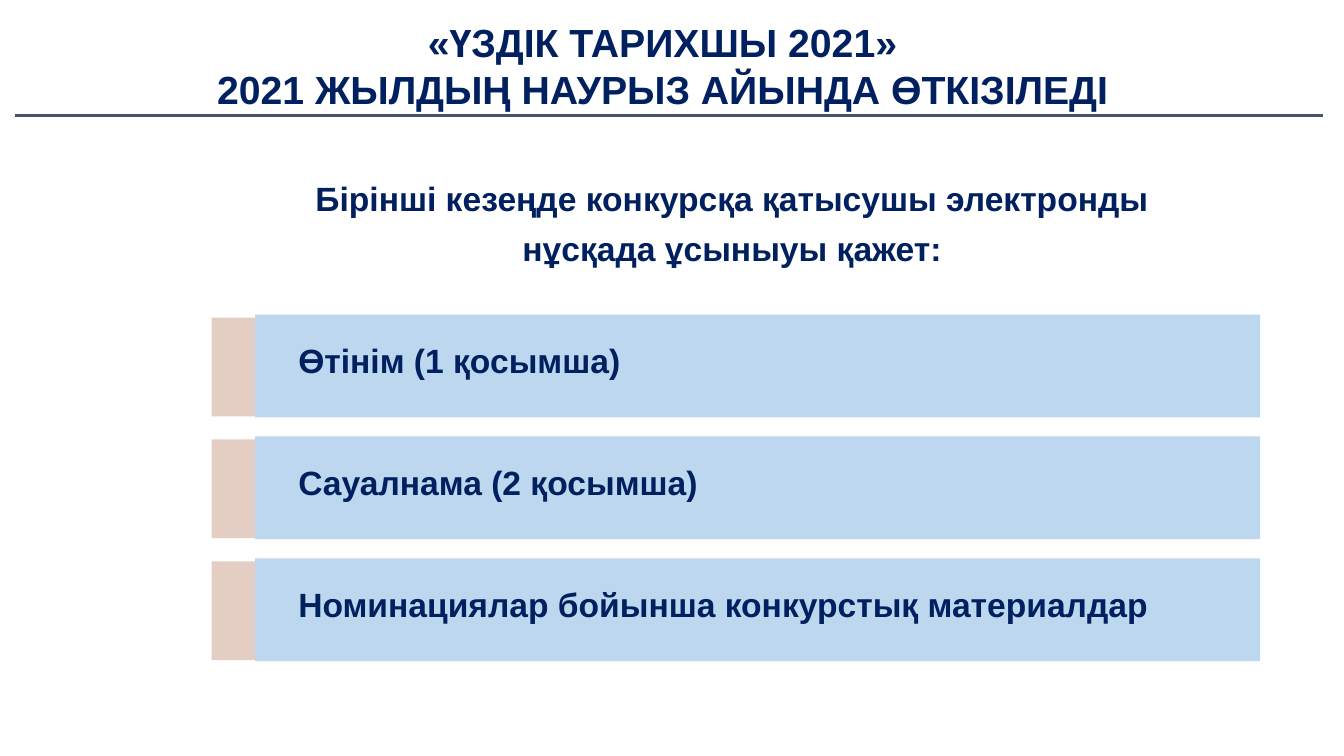
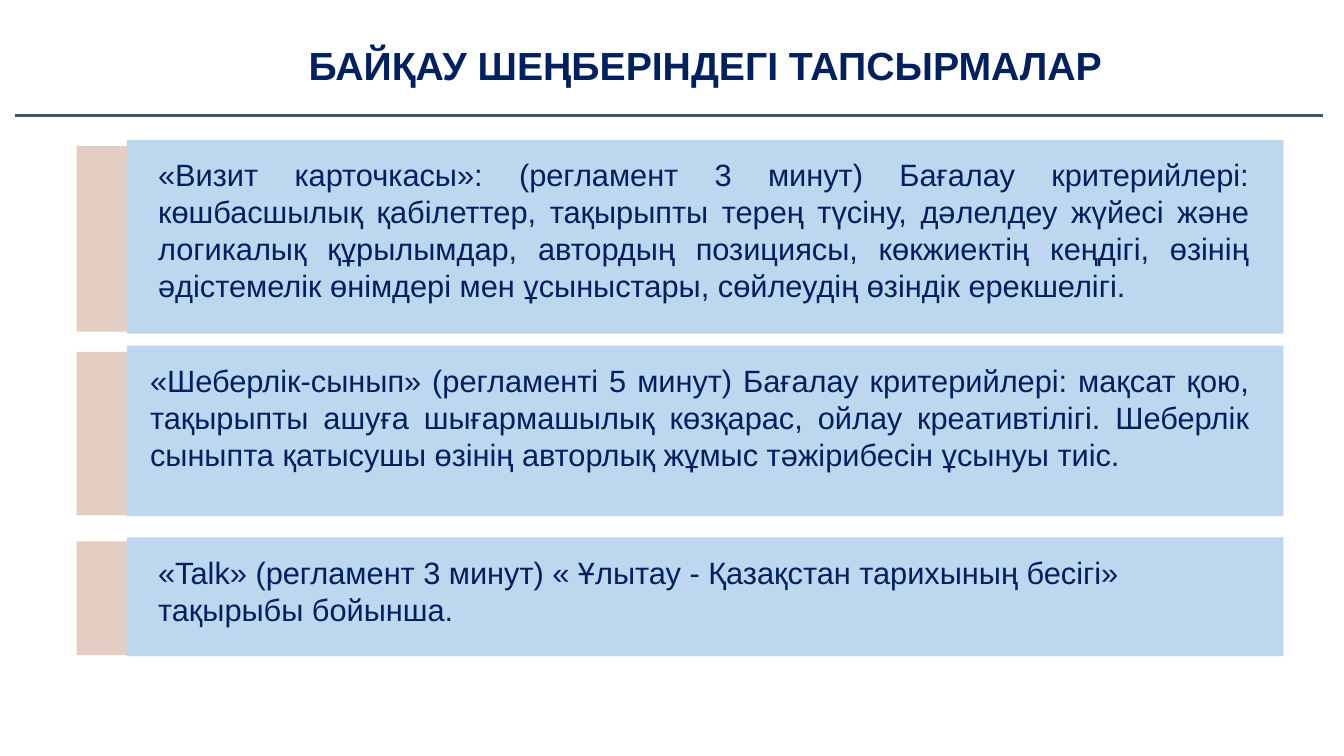
from lxml import etree
from pptx import Presentation
from pptx.dml.color import RGBColor
from pptx.enum.shapes import MSO_CONNECTOR, MSO_SHAPE
from pptx.enum.text import MSO_ANCHOR, PP_ALIGN
from pptx.oxml.ns import qn
from pptx.util import Emu, Pt

RECT = MSO_SHAPE.RECTANGLE
LINE = MSO_CONNECTOR.STRAIGHT
TOP = MSO_ANCHOR.TOP
LEFT, MID, JUST = PP_ALIGN.LEFT, PP_ALIGN.CENTER, PP_ALIGN.JUSTIFY

SCALE = 9144
NAVY, SLATE, SKY, SAND = "002060", "44546A", "BDD7EE", "E4CEC3"


def px(*sizes):
    return [Emu(size * SCALE) for size in sizes]


def color(code):
    return RGBColor.from_string(code)


class Deck:
    def __init__(self):
        self.file = Presentation()
        self.file.slide_width, self.file.slide_height = px(1333, 750)
        self.slide = None

    def page(self, title, box):
        self.slide = self.file.slides.add_slide(self.file.slide_layouts[6])
        self.rule(15, 115, 1312)
        self.text(title, box, 28, MID, bold=True)

    def rule(self, left, top, right):
        line = self.slide.shapes.add_connector(LINE, *px(left, top, right, top))
        line.line.color.rgb = color(SLATE)
        line.line.width = Pt(2.25)
        etree.SubElement(line._element.spPr, qn("a:effectLst"))

    def text(self, lines, box, size, align=LEFT, bold=False, **form):
        frame = self.slide.shapes.add_textbox(*px(*box)).text_frame
        frame.word_wrap = True
        frame.vertical_anchor = TOP
        for index, words in enumerate(lines):
            para = frame.add_paragraph() if index else frame.paragraphs[0]
            para.alignment = align
            for name, value in form.items():
                setattr(para, name, value)
            run = para.add_run()
            run.text = words
            style = {"name": "Arial", "size": Pt(size), "bold": bold}
            for name, value in style.items():
                setattr(run.font, name, value)
            run.font.color.rgb = color(NAVY)

    def rect(self, box, fill):
        shape = self.slide.shapes.add_shape(RECT, *px(*box))
        shape.shadow.inherit = False
        shape.fill.solid()
        shape.fill.fore_color.rgb = color(fill)
        shape.line.fill.background()

    def card(self, left, top, width, height, shift):
        inset, trim = round(height / 30), round(height / 24)
        self.rect((left, top + inset, width, height - trim), SAND)
        self.rect((left + shift, top, width, height), SKY)

    def save(self):
        self.file.save("out.pptx")


def entry(deck):
    deck.page(["«ҮЗДІК ТАРИХШЫ 2021»",
               "2021 ЖЫЛДЫҢ НАУРЫЗ АЙЫНДА ӨТКІЗІЛЕДІ"], (15, 13, 1284, 104))
    deck.text(["Бірінші кезеңде конкурсқа қатысушы электронды",
               "нұсқада ұсыныуы қажет:"], (218, 176, 1016, 101), 24, MID,
              bold=True, line_spacing=0.9, space_before=Pt(10))
    items = ["Өтінім (1 қосымша)", "Сауалнама (2 қосымша)",
             "Номинациялар бойынша конкурстық материалдар"]
    for index, item in enumerate(items):
        top = 312 + 121 * index
        deck.card(210, top, 997, 102, 43)
        deck.text([item], (286, top + 20, 948, 50), 24, bold=True)


def tasks(deck):
    deck.page(["БАЙҚАУ ШЕҢБЕРІНДЕГІ ТАПСЫРМАЛАР"], (186, 36, 1027, 57))
    items = [
        (139, 192, 147, JUST,
         "«Визит карточкасы»: (регламент 3 минут) Бағалау критерийлері: "
         "көшбасшылық қабілеттер, тақырыпты терең түсіну, дәлелдеу жүйесі "
         "және логикалық құрылымдар, автордың позициясы, көкжиектің кеңдігі, "
         "өзінің әдістемелік өнімдері мен ұсыныстары, сөйлеудің өзіндік "
         "ерекшелігі."),
        (343, 169, 139, JUST,
         "«Шеберлік-сынып» (регламенті 5 минут) Бағалау критерийлері: мақсат "
         "қою, тақырыпты ашуға шығармашылық көзқарас, ойлау креативтілігі. "
         "Шеберлік сыныпта қатысушы өзінің авторлық жұмыс тәжірибесін ұсынуы "
         "тиіс."),
        (533, 118, 147, LEFT,
         "«Talk» (регламент 3 минут) « Ұлытау - Қазақстан тарихының бесігі» "
         "тақырыбы бойынша."),
    ]
    for top, height, left, align, words in items:
        deck.card(76, top, 1147, height, 50)
        deck.text([words], (left, top + 11, 1249 - left, height - 34), 22, align)


def main():
    deck = Deck()
    entry(deck)
    tasks(deck)
    deck.save()


if __name__ == "__main__":
    main()
